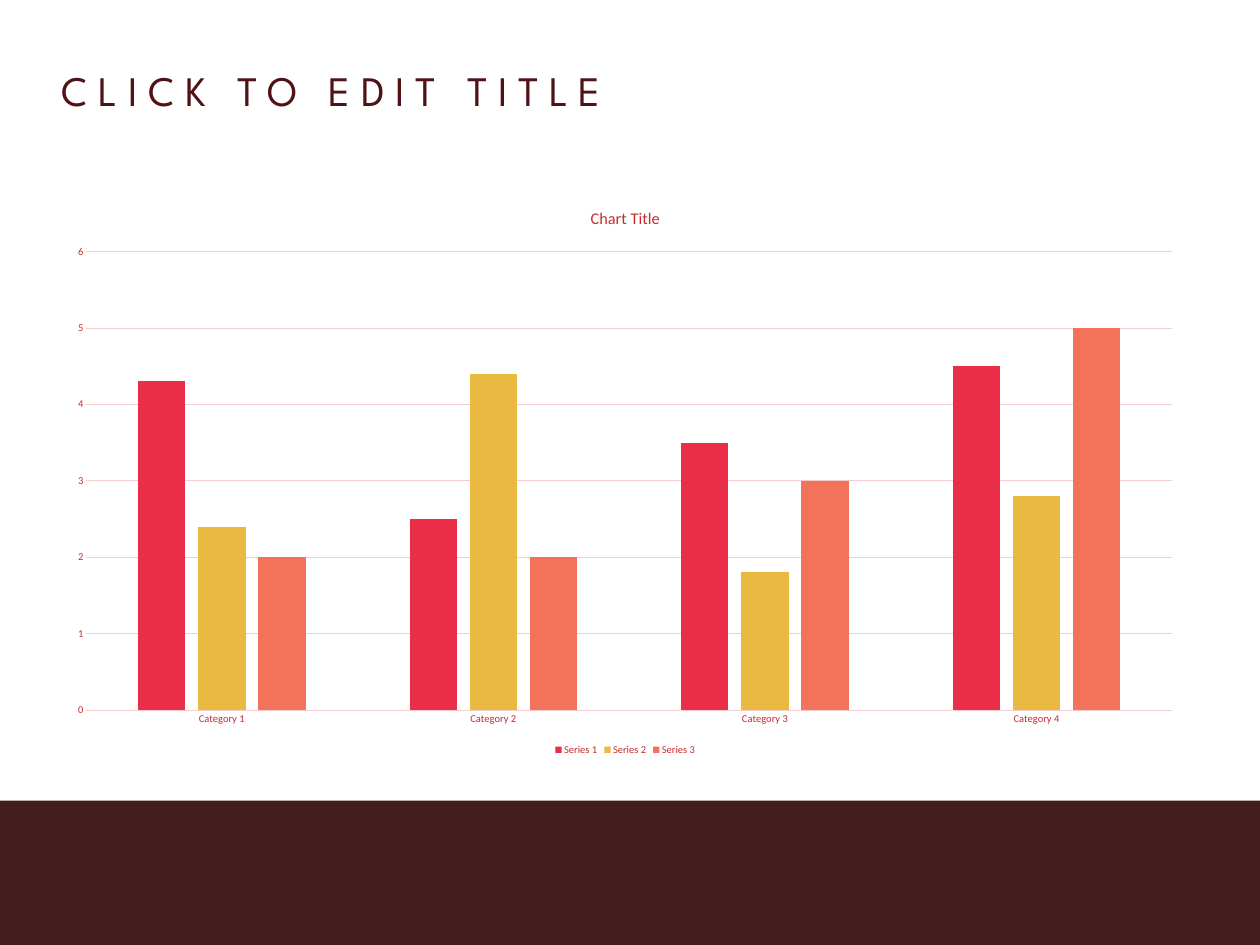
import pptx
import pptx.chart.data
import pptx.dml.color
import pptx.enum.chart
import pptx.enum.shapes
import pptx.enum.text
import pptx.util

Pt = pptx.util.Pt
Enum = pptx.enum.chart


def color(code):
    return pptx.dml.color.RGBColor.from_string(code)


def paint(fill, code):
    fill.solid()
    fill.fore_color.rgb = color(code)


class Deck:
    dark = "501214"
    red = "C62C31"
    pale = "F4CDCE"
    head = "League Spartan"
    body = "Calibri"

    def __init__(self, width, height):
        self.file = pptx.Presentation()
        self.file.slide_width = Pt(width)
        self.file.slide_height = Pt(height)
        self.slide = self.file.slides.add_slide(self.file.slide_layouts[5])

    def style(self, font, size, code, name):
        font.size = Pt(size)
        font.name = name
        font.bold = False
        font.color.rgb = color(code)

    def rule(self, line):
        line.color.rgb = color(self.pale)
        line.width = Pt(0.75)

    def band(self, box, code):
        shape = self.slide.shapes.add_shape(
            pptx.enum.shapes.MSO_SHAPE.RECTANGLE, *map(Pt, box))
        shape.shadow.inherit = False
        paint(shape.fill, code)
        shape.line.fill.background()

    def title(self, text, box, size, gap):
        """Fill the title; gap is the letter spacing in points."""
        shape = self.slide.shapes.title
        shape.left, shape.top, shape.width, shape.height = map(Pt, box)
        frame = shape.text_frame
        frame.word_wrap = True
        frame.auto_size = pptx.enum.text.MSO_AUTO_SIZE.NONE
        frame.vertical_anchor = pptx.enum.text.MSO_ANCHOR.TOP
        para = frame.paragraphs[0]
        para.alignment = pptx.enum.text.PP_ALIGN.LEFT
        para.line_spacing = 0.9
        run = para.add_run()
        run.text = text
        self.style(run.font, size, self.dark, self.head)
        run._r.get_or_add_rPr().set("spc", str(gap * 100))

    def chart(self, title, cats, series, box):
        """Draw clustered columns; series holds (name, colour, values)."""
        data = pptx.chart.data.CategoryChartData()
        data.categories = cats
        for name, _, vals in series:
            data.add_series(name, vals)
        chart = self.slide.shapes.add_chart(
            Enum.XL_CHART_TYPE.COLUMN_CLUSTERED, *map(Pt, box), data).chart
        self.style(chart.font, 10, self.dark, self.body)

        run = chart.chart_title.text_frame.paragraphs[0].add_run()
        run.text = title
        self.style(run.font, 18.6, self.red, self.body)
        chart.chart_title.include_in_layout = False

        chart.has_legend = True
        chart.legend.position = Enum.XL_LEGEND_POSITION.BOTTOM
        chart.legend.include_in_layout = False
        self.style(chart.legend.font, 12, self.red, self.body)

        for axis in (chart.category_axis, chart.value_axis):
            axis.major_tick_mark = Enum.XL_TICK_MARK.NONE
            axis.minor_tick_mark = Enum.XL_TICK_MARK.NONE
            self.style(axis.tick_labels.font, 12, self.red, self.body)
        self.rule(chart.category_axis.format.line)
        value = chart.value_axis
        value.format.line.fill.background()
        value.has_major_gridlines = True
        self.rule(value.major_gridlines.format.line)
        value.minimum_scale, value.maximum_scale = 0, 6
        value.major_unit = 1

        plot = chart.plots[0]
        plot.vary_by_categories = False
        plot.gap_width = 219
        plot.overlap = -27
        for bars, (_, code, _) in zip(plot.series, series):
            paint(bars.format.fill, code)
            bars.invert_if_negative = False


def main():
    deck = Deck(1440, 1080)
    deck.band((0, 915, 1440, 165), "431C1D")
    deck.title("CLICK TO EDIT TITLE", (63.36, 76.32, 1080, 90), 48, 12)
    deck.chart(
        "Chart Title",
        [f"Category {n}" for n in range(1, 5)],
        [("Series 1", "EB2E47", (4.3, 2.5, 3.5, 4.5)),
         ("Series 2", "EAB942", (2.4, 4.4, 1.8, 2.8)),
         ("Series 3", "F3725A", (2, 2, 3, 5))],
        (63.36, 216, 1302.48, 650.88))
    deck.file.save("out.pptx")


if __name__ == "__main__":
    main()
